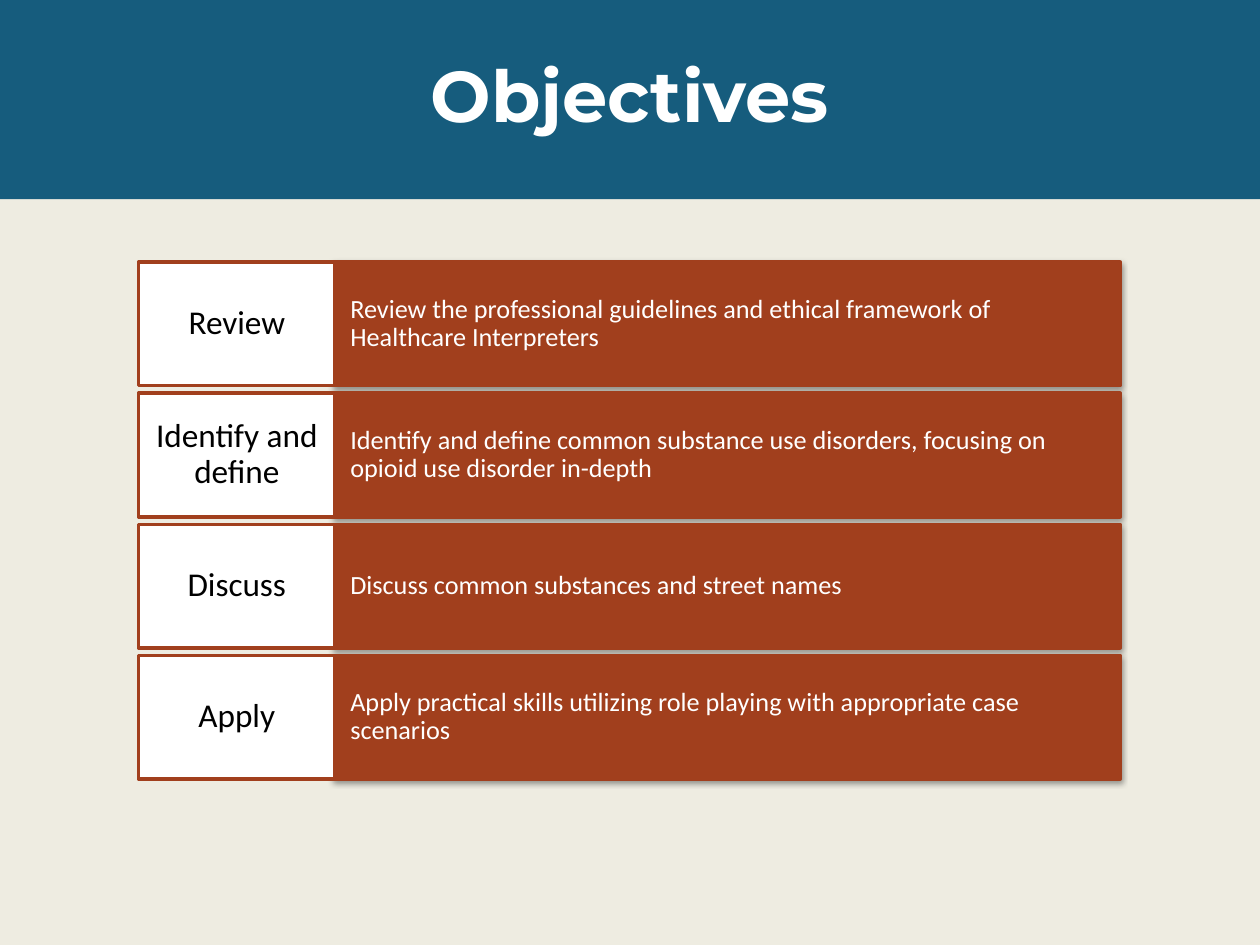
from dataclasses import dataclass
from typing import Any

from lxml import etree
from pptx import Presentation
from pptx.dml.color import RGBColor
from pptx.enum.shapes import MSO_SHAPE
from pptx.enum.text import MSO_ANCHOR, MSO_AUTO_SIZE, PP_ALIGN
from pptx.oxml.ns import qn
from pptx.util import Pt

RECTANGLE = MSO_SHAPE.RECTANGLE
MIDDLE = MSO_ANCHOR.MIDDLE
NO_AUTOFIT = MSO_AUTO_SIZE.NONE
LEFT, CENTER = PP_ALIGN.LEFT, PP_ALIGN.CENTER

COLORS = {
    "background": "EEECE1",
    "banner": "165C7D",
    "rust": "A13F1D",
    "white": "FFFFFF",
    "black": "000000",
}

OBJECTIVES = [
    ("Review", "Review the professional guidelines and ethical framework of "
               "Healthcare Interpreters"),
    ("Identify and define", "Identify and define common substance use disorders, "
                            "focusing on opioid use disorder in-depth"),
    ("Discuss", "Discuss common substances and street names"),
    ("Apply", "Apply practical skills utilizing role playing with appropriate "
              "case scenarios"),
]

ROWS_TOP, ROW_HEIGHT, ROW_PITCH = 149.8, 70.6, 74.9
LABEL_LEFT, LABEL_WIDTH, DETAIL_WIDTH = 79.2, 112.3, 448.6


def color(name):
    return RGBColor.from_string(COLORS[name])


def fill_solid(target, name):
    target.fill.solid()
    target.fill.fore_color.rgb = color(name)


def write_text(shape, text, *, size, text_color, font="Calibri", bold=False,
               align=LEFT, margins=(0, 0)):
    """Margins are the horizontal and the vertical inset in points."""
    frame = shape.text_frame
    frame.text = text
    frame.word_wrap = True
    frame.auto_size = NO_AUTOFIT
    frame.vertical_anchor = MIDDLE
    frame.margin_left = frame.margin_right = Pt(margins[0])
    frame.margin_top = frame.margin_bottom = Pt(margins[1])
    paragraph = frame.paragraphs[0]
    paragraph.alignment = align
    paragraph.line_spacing = 0.9
    paragraph.font.name = font
    paragraph.font.size = Pt(size)
    paragraph.font.bold = bold
    paragraph.font.color.rgb = color(text_color)


def add_soft_shadow(shape):
    effects = shape._element.spPr.find(qn("a:effectLst"))
    shadow = etree.SubElement(
        effects, qn("a:outerShdw"), blurRad=str(Pt(3.1)), dist=str(Pt(1.6)),
        dir="5400000", rotWithShape="0")
    shade = etree.SubElement(shadow, qn("a:srgbClr"), val=COLORS["black"])
    etree.SubElement(shade, qn("a:alpha"), val="38000")


@dataclass
class SlideBuilder:
    slide: Any
    border: str = "rust"
    border_width: float = 2

    def background(self, name):
        fill_solid(self.slide.background, name)

    def title(self, text, width, height):
        title = self.slide.shapes.title
        title.left, title.top = Pt(0), Pt(0)
        title.width, title.height = Pt(width), Pt(height)
        fill_solid(title, "banner")
        write_text(title, text, size=41, text_color="white", font="Montserrat",
                   bold=True, align=CENTER)

    def box(self, left, top, width, fill, text, *, shadow=False, **text_format):
        shape = self.slide.shapes.add_shape(
            RECTANGLE, Pt(left), Pt(top), Pt(width), Pt(ROW_HEIGHT))
        fill_solid(shape, fill)
        shape.line.color.rgb = color(self.border)
        shape.line.width = Pt(self.border_width)
        shape.shadow.inherit = False
        if shadow:
            add_soft_shadow(shape)
        write_text(shape, text, **text_format)

    def objective(self, top, label, detail):
        self.box(LABEL_LEFT + LABEL_WIDTH, top, DETAIL_WIDTH, "rust", detail,
                 shadow=True, size=15, text_color="white", margins=(8.7, 18))
        self.box(LABEL_LEFT, top, LABEL_WIDTH, "white", label,
                 size=19, text_color="black", align=CENTER, margins=(5.9, 7))


def main():
    presentation = Presentation()
    presentation.slide_width, presentation.slide_height = Pt(720), Pt(540)
    title_only = presentation.slide_layouts[5]
    builder = SlideBuilder(presentation.slides.add_slide(title_only))
    builder.background("background")
    builder.title("Objectives", 720, 113.8)
    for row, (label, detail) in enumerate(OBJECTIVES):
        builder.objective(ROWS_TOP + row * ROW_PITCH, label, detail)
    presentation.save("out.pptx")


if __name__ == "__main__":
    main()
